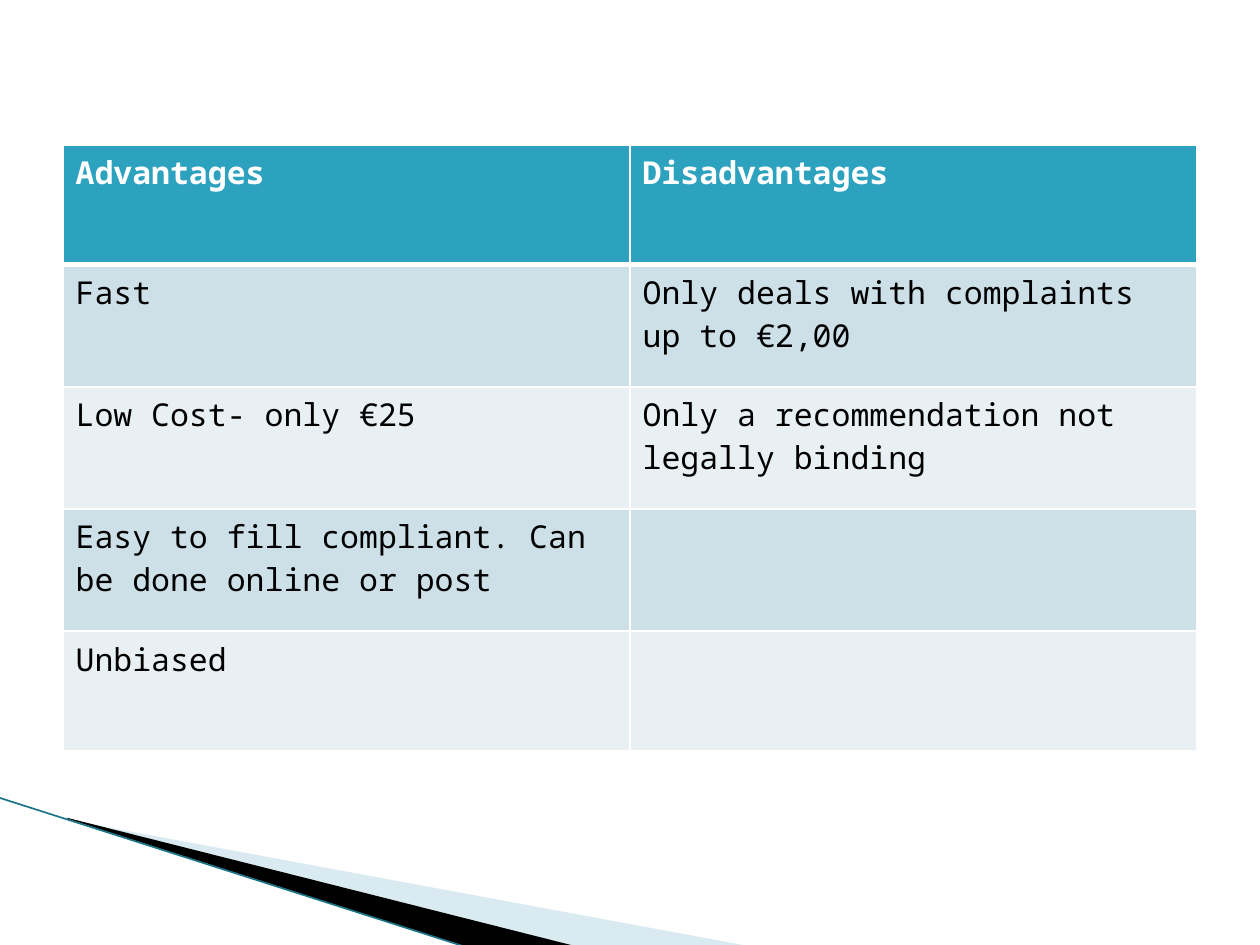
"""Build a slide that sets advantages against disadvantages in a table."""
from lxml import etree
from pptx import Presentation
from pptx.dml.color import RGBColor
from pptx.enum.shapes import MSO_CONNECTOR
from pptx.oxml.ns import qn
from pptx.util import Inches, Pt

STRAIGHT = MSO_CONNECTOR.STRAIGHT
FONT = "Noto Sans Mono"
WHITE = RGBColor(0xFF, 0xFF, 0xFF)
BLACK = RGBColor(0x00, 0x00, 0x00)
HEADER_FILL = RGBColor(0x2D, 0xA2, 0xBF)
BAND_FILLS = (RGBColor(0xE8, 0xF0, 0xF4), RGBColor(0xCD, 0xE0, 0xE8))
WEDGE_BLUE = RGBColor(0xA0, 0xCB, 0xDC)
EDGE_TEAL = RGBColor(0x1B, 0x75, 0x87)

ROWS = (
    ("Advantages", "Disadvantages"),
    ("Fast", "Only deals with complaints up to €2,00"),
    ("Low Cost- only €25", "Only a recommendation not legally binding"),
    ("Easy to fill compliant. Can be done online or post", ""),
    ("Unbiased", ""),
)
ROW_HEIGHTS = (0.95, 0.97, 0.97, 0.97, 0.95)
BLUE_WEDGE = ((0.55, 6.51), (5.95, 7.51), (4.56, 7.51), (0.55, 6.5))
BLACK_WEDGE = ((0.53, 6.49), (4.57, 7.51), (3.72, 7.52), (0.54, 6.5))


def add_wedge(slide, points, color, opacity=100):
    """Add a filled polygon through points given in inches."""
    corners = [(Inches(x), Inches(y)) for x, y in points]
    builder = slide.shapes.build_freeform(*corners[0])
    builder.add_line_segments(corners[1:], close=True)
    shape = builder.convert_to_shape()
    shape.shadow.inherit = False
    shape.fill.solid()
    shape.fill.fore_color.rgb = color
    shape.line.fill.background()
    if opacity < 100:
        color_element = shape.fill._xPr.find(qn("a:solidFill"))[0]
        etree.SubElement(color_element, qn("a:alpha"), val=str(opacity * 1000))


def add_edge(slide, start, end):
    """Add the thin line along the wedges."""
    points = [Inches(value) for value in (*start, *end)]
    connector = slide.shapes.add_connector(STRAIGHT, *points)
    connector.line.color.rgb = EDGE_TEAL
    connector.line.width = Pt(0.95)
    etree.SubElement(connector._element.spPr, qn("a:effectLst"))


def set_borders(cell, bottom_width, top_width):
    """Draw white borders around a cell."""
    widths = {"lnL": 1, "lnR": 1, "lnT": top_width, "lnB": bottom_width}
    properties = cell._tc.get_or_add_tcPr()
    for position, (side, width) in enumerate(widths.items()):
        border = etree.Element(qn(f"a:{side}"), w=str(Pt(width)))
        fill = etree.SubElement(border, qn("a:solidFill"))
        etree.SubElement(fill, qn("a:srgbClr"), val=str(WHITE))
        properties.insert(position, border)


def style_cell(cell, text, row):
    """Fill a cell and write its text."""
    is_header = row == 0
    cell.fill.solid()
    cell.fill.fore_color.rgb = HEADER_FILL if is_header else BAND_FILLS[row % 2]
    set_borders(cell, 3 if is_header else 1, 3 if row == 1 else 1)
    if text:
        run = cell.text_frame.paragraphs[0].add_run()
        run.text = text
        run.font.name = FONT
        run.font.size = Pt(18)
        run.font.bold = is_header
        run.font.color.rgb = WHITE if is_header else BLACK


def add_comparison_table(slide):
    """Add the two-column table."""
    frame = slide.shapes.add_table(
        len(ROWS), 2, Inches(0.5), Inches(1.15), Inches(9), Inches(sum(ROW_HEIGHTS))
    )
    table = frame.table
    for row, (texts, height) in enumerate(zip(ROWS, ROW_HEIGHTS)):
        table.rows[row].height = Inches(height)
        for column, text in enumerate(texts):
            style_cell(table.cell(row, column), text, row)


def main():
    """Build and save the presentation."""
    presentation = Presentation()
    presentation.slide_width = Inches(10)
    presentation.slide_height = Inches(7.5)
    slide = presentation.slides.add_slide(presentation.slide_layouts[6])
    add_wedge(slide, BLUE_WEDGE, WEDGE_BLUE, opacity=40)
    add_wedge(slide, BLACK_WEDGE, BLACK)
    add_edge(slide, (-0.01, 6.33), (3.71, 7.52))
    add_comparison_table(slide)
    presentation.save("out.pptx")


if __name__ == "__main__":
    main()
